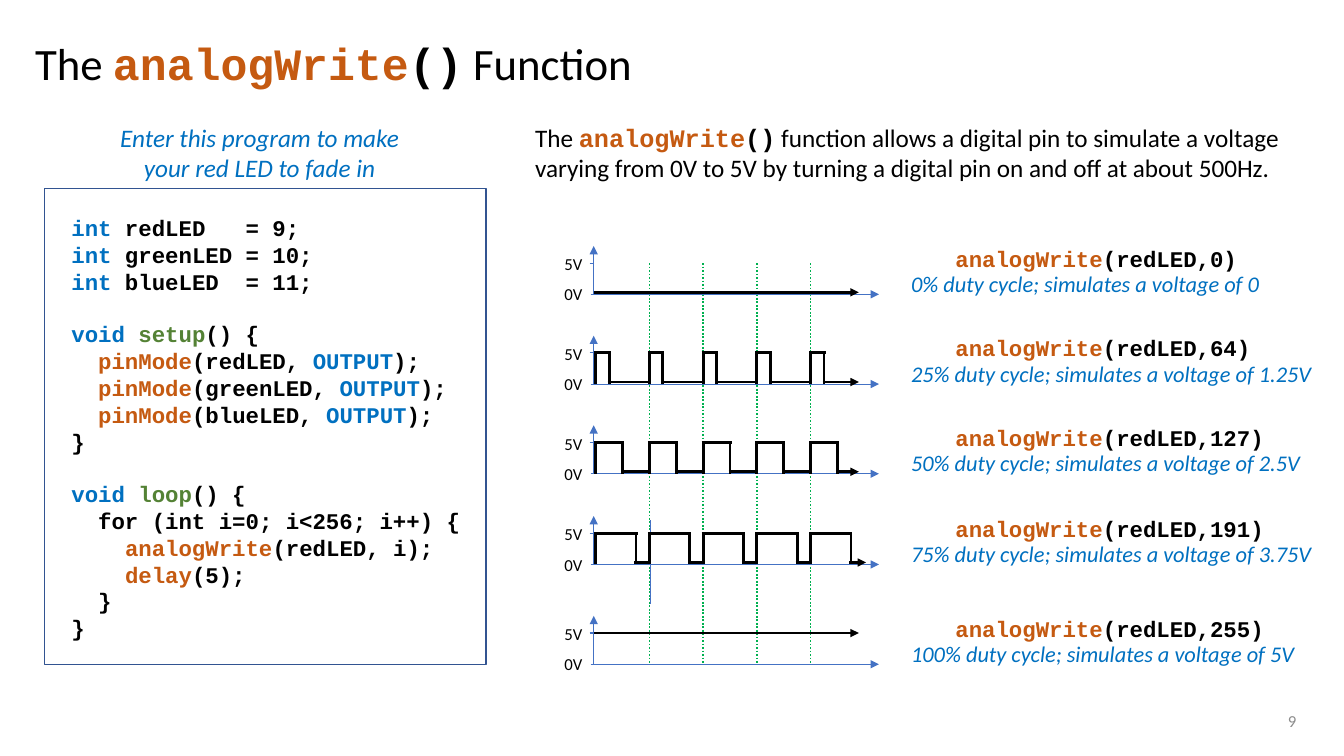
from lxml.etree import SubElement
from pptx import Presentation
from pptx.dml.color import RGBColor
from pptx.enum.dml import MSO_LINE
from pptx.enum.shapes import MSO_CONNECTOR, MSO_SHAPE
from pptx.enum.text import MSO_ANCHOR, PP_ALIGN
from pptx.oxml.ns import qn
from pptx.util import Inches, Pt

# Grid: each column and row is a tenth of an inch
COLS, ROWS = 133.33, 75

HUES = {
    "black": "000000", "blue": "0070C0", "green": "548235", "rust": "C55A11",
    "axis": "4472C4", "dots": "00B050", "frame": "325491", "grey": "8C8C8C",
}
TINTS = {
    "int": "blue", "void": "blue", "OUTPUT": "blue",
    "setup": "green", "loop": "green",
    "pinMode": "rust", "analogWrite": "rust", "delay": "rust",
}
SANS, MONO = "Calibri", "Courier New"

# A bar splits a line into runs
CODE = [
    ["int| redLED   = 9;", "int| greenLED = 10;", "int| blueLED  = 11;"],
    ["void| |setup|() {",
     "  |pinMode|(redLED, |OUTPUT|);",
     "  |pinMode|(greenLED, |OUTPUT|);",
     "  |pinMode|(blueLED, |OUTPUT|);",
     "}"],
    ["void| |loop|() {",
     "  for (int i=0; i<256; i++) {",
     "    |analogWrite|(redLED, i);",
     "    |delay|(5);",
     "  }",
     "}"],
]

# Base row, duty share, value written, voltage
WAVES = [
    (29.2, 0, 0, "0"),
    (38.1, 0.25, 64, "1.25V"),
    (47, 0.5, 127, "2.5V"),
    (56, 0.75, 191, "3.75V"),
    (65.9, 1, 255, "5V"),
]
LEFT, STEP, COUNT = 59.1, 5.33, 5
HIGH, LOW, LAP = 3.1, 0.2, 0.15


def unit(n):
    return Inches(n / 10)


def hue(name):
    return RGBColor.from_string(HUES[name])


def style(run, size, tone, mono, slant):
    font = run.font
    font.size = Pt(size)
    font.name = MONO if mono else SANS
    font.bold = mono
    font.italic = slant
    font.color.rgb = hue(TINTS.get(run.text, tone) if mono else tone)


def fill(para, line, size, tone, mono, slant):
    for part in line.split("|"):
        run = para.add_run()
        run.text = part
        style(run, size, tone, mono or part in ("analogWrite", "()"), slant)


def text(slide, box, blocks, size, tone="black", mono=False, slant=False,
         wrap=False, align=PP_ALIGN.LEFT, anchor=MSO_ANCHOR.TOP):
    frame = slide.shapes.add_textbox(*map(unit, box)).text_frame
    frame.word_wrap = wrap
    frame.vertical_anchor = anchor
    para = None
    for block in blocks:
        for i, line in enumerate(block):
            gap = para is not None and i == 0
            para = frame.add_paragraph() if para else frame.paragraphs[0]
            para.alignment = align
            if gap:
                para.space_before = Pt(size * 1.13)  # one line of code
            fill(para, line, size, tone, mono, slant)


def rule(slide, x1, y1, x2, y2, tone="black", width=2, tip=False, dash=None):
    link = slide.shapes.add_connector(
        MSO_CONNECTOR.STRAIGHT, *map(unit, (x1, y1, x2, y2)))
    link.line.color.rgb = hue(tone)
    link.line.width = Pt(width)
    if dash:
        link.line.dash_style = dash
    props = link._element.spPr
    if tip:
        SubElement(props.find(qn("a:ln")), qn("a:tailEnd"), type="triangle")
    SubElement(props, qn("a:effectLst"))


def axes(slide, base):
    rule(slide, 58.9, base, 58.9, base - 4.8, "axis", 0.75, True)
    rule(slide, 58.6, base, 87.2, base, "axis", 0.75, True)
    rule(slide, 58.5, base - HIGH, 58.9, base - HIGH, "axis", 0.75)
    for mark, rise in (("0V", 1.5), ("5V", 4.5)):
        text(slide, (55, base - rise, 3.8, 3), [[mark]], 12)


def wave(slide, base, duty):
    top, low = base - HIGH, base - LOW
    if duty in (0, 1):
        y = top if duty else low
        rule(slide, 58.9, y, 85.2, y, tip=True)
        return
    for i in range(COUNT):
        rise = LEFT + i * STEP
        fall = rise + duty * STEP
        last = i == COUNT - 1
        end = max(85.2, fall + 1.5) if last else rise + STEP + LAP
        rule(slide, rise, base, rise, top)
        rule(slide, rise - LAP, top, fall + LAP, top)
        rule(slide, fall, top, fall, base)
        rule(slide, fall - LAP, low, end, low, tip=last)


def label(slide, base, duty, value, volts):
    text(slide, (93.8, base - 5.4, 33.6, 3.7),
         [[f"analogWrite|(redLED,{value})"]], 16, mono=True)
    note = f"{duty:.0%} duty cycle; simulates a voltage of {volts}"
    text(slide, (89.4, base - 2.9, 42.2, 3.7), [[note]], 16, "blue", slant=True)


def main():
    deck = Presentation()
    deck.slide_width, deck.slide_height = unit(COLS), unit(ROWS)
    slide = deck.slides.add_slide(deck.slide_layouts[6])

    # Code, title, page number and summary
    text(slide, (6.1, 20.8, 41.2, 44.1), CODE, 16, mono=True)
    text(slide, (2.5, 3, 90, 7.5), [["The |analogWrite|()| Function"]], 32,
         wrap=True)
    text(slide, (94.2, 69.5, 35.4, 4), [["9"]], 12, "grey", wrap=True,
         align=PP_ALIGN.RIGHT, anchor=MSO_ANCHOR.MIDDLE)
    text(slide, (52.1, 11.6, 78.5, 10.1),
         [["The |analogWrite|()| function allows a digital pin to simulate "
           "a voltage varying from 0V to 5V by turning a digital pin on and "
           "off at about 500Hz."]], 18, wrap=True)

    # Period marks
    rule(slide, 64.5, 51.6, 64.5, 59.9, "axis", 0.5)
    for i in range(1, COUNT):
        x = LEFT + i * STEP
        rule(slide, x, 26.1, x, 65.9, "dots", 1.25, dash=MSO_LINE.ROUND_DOT)

    # Waveforms
    for base, duty, value, volts in WAVES:
        axes(slide, base)
        wave(slide, base, duty)
        label(slide, base, duty, value, volts)

    # Prompt and code frame
    text(slide, (9, 11.6, 33.5, 7.1),
         [["Enter this program to make your red LED to fade in"]], 18, "blue",
         slant=True, wrap=True, align=PP_ALIGN.CENTER)
    frame = slide.shapes.add_shape(
        MSO_SHAPE.RECTANGLE, *map(unit, (4.4, 18.7, 43.8, 47.2)))
    frame.shadow.inherit = False
    frame.fill.background()
    frame.line.color.rgb = hue("frame")
    frame.line.width = Pt(1)

    deck.save("out.pptx")


if __name__ == "__main__":
    main()
